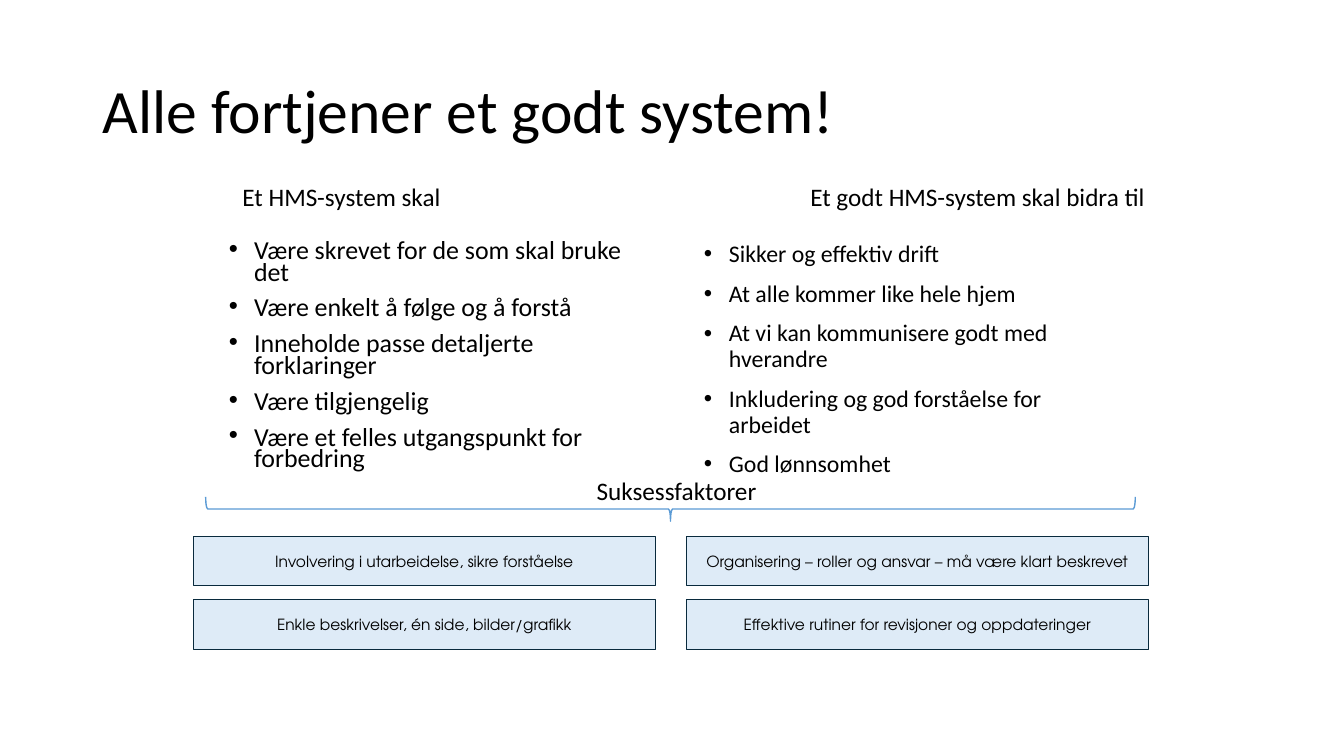
from lxml import etree
from pptx import Presentation
from pptx.dml.color import RGBColor
from pptx.enum.shapes import MSO_SHAPE
from pptx.enum.text import MSO_ANCHOR, MSO_AUTO_SIZE, PP_ALIGN
from pptx.oxml.ns import qn
from pptx.util import Inches, Pt

CENTER = PP_ALIGN.CENTER
MIDDLE = MSO_ANCHOR.MIDDLE
COLORS = {"text": "000000", "brace": "5B9BD5", "box": "DEEBF7", "border": "092A3D"}


def place(shape, left, top, width, height):
    shape.left, shape.top = Inches(left), Inches(top)
    shape.width, shape.height = Inches(width), Inches(height)


def style_text(paragraph, size, font="Calibri", align=PP_ALIGN.LEFT, spacing=1.0):
    paragraph.alignment = align
    paragraph.line_spacing = spacing
    paragraph.space_before = Pt(0)
    for run in paragraph.runs:
        run.font.size = Pt(size)
        run.font.name = font
        run.font.bold = False
        run.font.color.rgb = RGBColor.from_string(COLORS["text"])


presentation = Presentation()
presentation.slide_width = Inches(13.33)
presentation.slide_height = Inches(7.5)
comparison_layout = presentation.slide_layouts[4]
slide = presentation.slides.add_slide(comparison_layout)
title, left_heading, left_list, right_heading, right_list = slide.placeholders

# Title and column headings
headings = [
    (title, "Alle fortjener et godt system!", (0.92, 0.4, 11.5, 1.45), 44, PP_ALIGN.LEFT),
    (left_heading, "Et HMS-system skal ", (0.67, 1.66, 5.49, 0.62), 18, CENTER),
    (right_heading, "Et godt HMS-system skal bidra til", (6.95, 1.66, 5.49, 0.62), 18, CENTER),
]
for placeholder, text, position, size, align in headings:
    place(placeholder, *position)
    frame = placeholder.text_frame
    frame.text = text
    frame.auto_size = MSO_AUTO_SIZE.NONE
    frame.vertical_anchor = MIDDLE
    style_text(frame.paragraphs[0], size, align=align, spacing=0.9)

# Bulleted columns
columns = [
    (left_list, 2.17, 18.5, 0.7, [
        "Være skrevet for de som skal bruke det",
        "Være enkelt å følge og å forstå",
        "Inneholde passe detaljerte forklaringer",
        "Være tilgjengelig",
        "Være et felles utgangspunkt for forbedring",
    ]),
    (right_list, 6.88, 17, 0.9, [
        "Sikker og effektiv drift",
        "At alle kommer like hele hjem",
        "At vi kan kommunisere godt med hverandre",
        "Inkludering og god forståelse for arbeidet",
        "God lønnsomhet",
    ]),
]
for placeholder, left, size, spacing, items in columns:
    place(placeholder, left, 2.35, 4.12, 2.5)
    frame = placeholder.text_frame
    frame.text = "\n".join(items)
    frame.auto_size = MSO_AUTO_SIZE.NONE
    for index, paragraph in enumerate(frame.paragraphs):
        properties = paragraph._p.get_or_add_pPr()
        properties.set("marL", str(Inches(0.25)))
        properties.set("indent", str(Inches(-0.25)))
        etree.SubElement(properties, qn("a:buFont")).set("typeface", "Arial")
        etree.SubElement(properties, qn("a:buChar")).set("char", "•")
        style_text(paragraph, size, spacing=spacing)
        if index:
            paragraph.space_before = Pt(10)

# Brace and its label
brace = slide.shapes.add_shape(
    MSO_SHAPE.RIGHT_BRACE, Inches(6.53), Inches(0.44), Inches(0.24), Inches(9.22))
brace.rotation = 90
brace.shadow.inherit = False
brace.fill.background()
brace.line.color.rgb = RGBColor.from_string(COLORS["brace"])
brace.line.width = Pt(1)

label = slide.shapes.add_textbox(Inches(5.81), Inches(4.67), Inches(1.8), Inches(0.4))
label.text_frame.text = "Suksessfaktorer"
label.text_frame.word_wrap = False
label.text_frame.auto_size = MSO_AUTO_SIZE.SHAPE_TO_FIT_TEXT
style_text(label.text_frame.paragraphs[0], 18, align=CENTER)

# Grid of success factors
factors = [
    "Involvering i utarbeidelse, sikre forståelse",
    "Organisering – roller og ansvar – må være klart beskrevet",
    "Enkle beskrivelser, én side, bilder/grafikk",
    "Effektive rutiner for revisjoner og oppdateringer",
]
for index, factor in enumerate(factors):
    row, column = divmod(index, 2)
    box = slide.shapes.add_shape(
        MSO_SHAPE.RECTANGLE, Inches(1.92 + 4.89 * column), Inches(5.32 + 0.63 * row),
        Inches(4.58), Inches(0.49))
    box.shadow.inherit = False
    box.fill.solid()
    box.fill.fore_color.rgb = RGBColor.from_string(COLORS["box"])
    box.line.color.rgb = RGBColor.from_string(COLORS["border"])
    box.line.width = Pt(0.75)
    frame = box.text_frame
    frame.text = factor
    frame.word_wrap = True
    frame.vertical_anchor = MIDDLE
    frame.margin_left = frame.margin_right = Inches(0.04)
    frame.margin_top = frame.margin_bottom = Inches(0.04)
    style_text(frame.paragraphs[0], 11, font="TeX Gyre Adventor", align=CENTER)

presentation.save("out.pptx")
